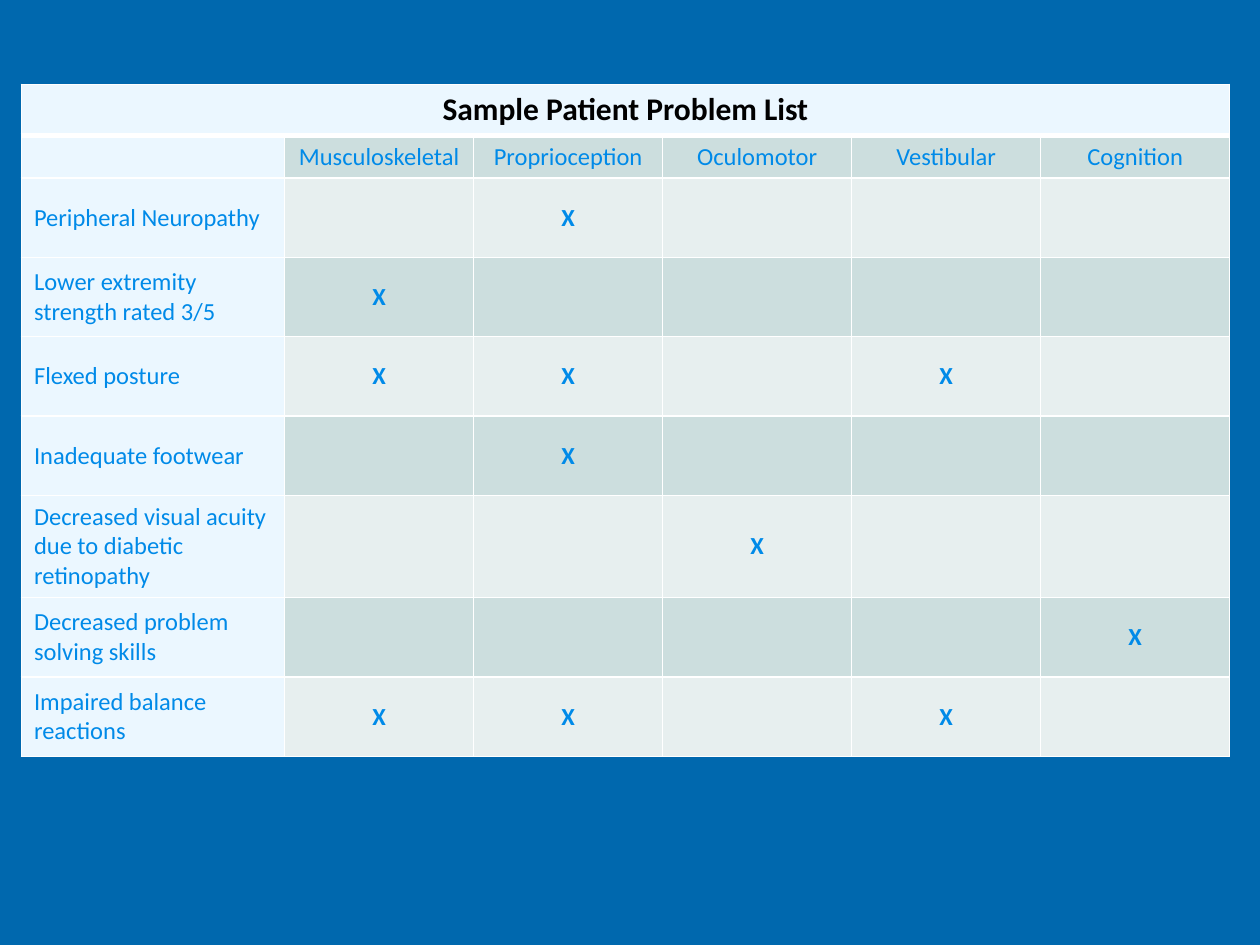
from lxml import etree
from pptx import Presentation
from pptx.dml.color import RGBColor
from pptx.enum.text import MSO_ANCHOR, PP_ALIGN
from pptx.oxml.ns import qn
from pptx.util import Inches, Pt

CENTER, LEFT = PP_ALIGN.CENTER, PP_ALIGN.LEFT
MIDDLE, TOP = MSO_ANCHOR.MIDDLE, MSO_ANCHOR.TOP
COLORS = {
    "background": "0068AE",
    "label": "EBF7FF",
    "dark band": "CCDEDE",
    "light band": "E7EFEF",
    "border": "FFFFFF",
    "title": "000000",
    "text": "008AE8",
}
FONT = "Calibri"
TITLE = "Sample Patient Problem List"
SYSTEMS = ["Musculoskeletal", "Proprioception", "Oculomotor", "Vestibular", "Cognition"]
PROBLEMS = {
    "Peripheral Neuropathy": ["Proprioception"],
    "Lower extremity strength rated 3/5": ["Musculoskeletal"],
    "Flexed posture": ["Musculoskeletal", "Proprioception", "Vestibular"],
    "Inadequate footwear": ["Proprioception"],
    "Decreased visual acuity due to diabetic retinopathy": ["Oculomotor"],
    "Decreased problem solving skills": ["Cognition"],
    "Impaired balance reactions": ["Musculoskeletal", "Proprioception", "Vestibular"],
}
LABEL_WIDTH, SYSTEM_WIDTH = 2.09, 1.5
HEADING_HEIGHT, PROBLEM_HEIGHT = 0.33, 0.63


def style_cell(cell, fill, top=1, bottom=1):
    """Give the cell its fill and white borders, with widths in points."""
    properties = cell._tc.get_or_add_tcPr()
    for side, width in (("L", 1), ("R", 1), ("T", top), ("B", bottom)):
        line = etree.SubElement(properties, qn(f"a:ln{side}"), w=str(Pt(width)))
        solid = etree.SubElement(line, qn("a:solidFill"))
        etree.SubElement(solid, qn("a:srgbClr"), val=COLORS["border"])
    cell.fill.solid()
    cell.fill.fore_color.rgb = RGBColor.from_string(COLORS[fill])


def write_cell(cell, text, size=14, color="text", bold=False, align=CENTER, anchor=MIDDLE):
    cell.vertical_anchor = anchor
    paragraph = cell.text_frame.paragraphs[0]
    paragraph.alignment = align
    if not text:
        # An empty cell still needs the text size, or its row grows
        etree.SubElement(paragraph._p, qn("a:endParaRPr"), sz=str(size * 100))
        return
    run = paragraph.add_run()
    run.text = text
    run.font.name = FONT
    run.font.size = Pt(size)
    run.font.bold = bold
    run.font.color.rgb = RGBColor.from_string(COLORS[color])


prs = Presentation()
prs.slide_width, prs.slide_height = Inches(10), Inches(7.5)
slide = prs.slides.add_slide(prs.slide_layouts[6])
slide.background.fill.solid()
slide.background.fill.fore_color.rgb = RGBColor.from_string(COLORS["background"])

column_widths = [LABEL_WIDTH] + [SYSTEM_WIDTH] * len(SYSTEMS)
row_heights = [HEADING_HEIGHT] * 2 + [PROBLEM_HEIGHT] * len(PROBLEMS)
problem_list = slide.shapes.add_table(
    len(row_heights), len(column_widths), Inches(0.17), Inches(0.67),
    Inches(sum(column_widths)), Inches(sum(row_heights)),
).table
for column, width in zip(problem_list.columns, column_widths):
    column.width = Inches(width)
for row, height in zip(problem_list.rows, row_heights):
    row.height = Inches(height)

# Title across all columns, with a thick rule below
for column in range(len(column_widths)):
    style_cell(problem_list.cell(0, column), "label", bottom=3)
title_cell = problem_list.cell(0, 0)
title_cell.merge(problem_list.cell(0, len(SYSTEMS)))
write_cell(title_cell, TITLE, size=18, color="title", bold=True, anchor=TOP)

# System headings
for column, heading in enumerate([""] + SYSTEMS):
    cell = problem_list.cell(1, column)
    style_cell(cell, "dark band" if heading else "label", top=3)
    write_cell(cell, heading)

# One banded row per problem, with an X under each system involved
for row, (problem, involved) in enumerate(PROBLEMS.items(), start=2):
    label_cell = problem_list.cell(row, 0)
    style_cell(label_cell, "label")
    write_cell(label_cell, problem, align=LEFT)
    for column, system in enumerate(SYSTEMS, start=1):
        cell = problem_list.cell(row, column)
        style_cell(cell, "dark band" if row % 2 else "light band")
        write_cell(cell, "X" if system in involved else "", bold=True)

prs.save("out.pptx")
